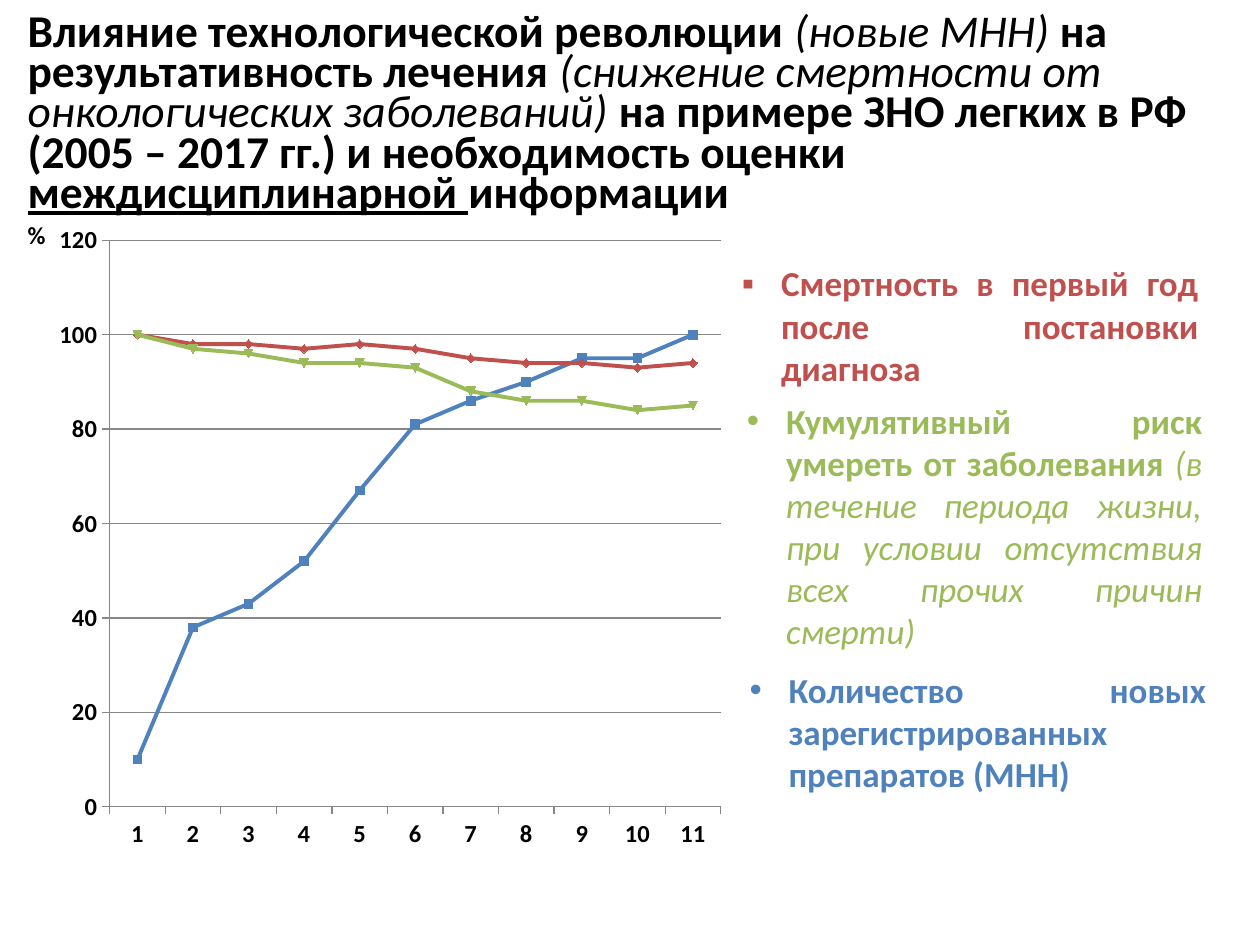
from lxml import etree
from pptx import Presentation
from pptx.chart.data import CategoryChartData
from pptx.dml.color import RGBColor
from pptx.enum.chart import XL_CHART_TYPE, XL_TICK_MARK
from pptx.enum.text import MSO_ANCHOR, MSO_AUTO_SIZE, PP_ALIGN
from pptx.oxml import parse_xml
from pptx.oxml.ns import nsdecls, qn
from pptx.util import Inches, Pt

LINE_MARKERS = XL_CHART_TYPE.LINE_MARKERS
TICK_OUTSIDE = XL_TICK_MARK.OUTSIDE
TOP = MSO_ANCHOR.TOP
FIT_SHAPE = MSO_AUTO_SIZE.SHAPE_TO_FIT_TEXT
JUSTIFY = PP_ALIGN.JUSTIFY

FONT = "Calibri"
COLORS = {
    "text": "000000",
    "drugs": "4F81BD",
    "mortality": "C0504D",
    "risk": "9BBB59",
    "grid": "878787",
}
BOLD = {"bold": True}
ITALIC = {"italic": True}
UNDERLINED = {"bold": True, "underline": True}

TITLE = [
    ("Влияние технологической революции ", BOLD),
    ("(новые МНН) ", ITALIC),
    ("на результативность лечения ", BOLD),
    ("(снижение смертности от онкологических заболеваний) ", ITALIC),
    ("на примере ЗНО легких в РФ (2005 – 2017 гг.) и необходимость оценки ", BOLD),
    ("междисциплинарной ", UNDERLINED),
    ("информации", BOLD),
]
SERIES = [
    ("Series 1", "drugs", (10, 38, 43, 52, 67, 81, 86, 90, 95, 95, 100)),
    ("Series 2", "mortality", (100, 98, 98, 97, 98, 97, 95, 94, 94, 93, 94)),
    ("Series 3", "risk", (100, 97, 96, 94, 94, 93, 88, 86, 86, 84, 85)),
]
LEGEND = [
    ((5.79, 2.03, 3.82, 1.11), "mortality", "▪",
     [("Смертность в первый год после постановки диагноза", BOLD)]),
    ((5.83, 3.12, 3.81, 2.12), "risk", "•",
     [("Кумулятивный риск умереть от заболевания ", BOLD),
      ("(в течение периода жизни, при условии отсутствия всех прочих причин смерти) ",
       ITALIC)]),
    ((5.85, 5.26, 3.82, 1.11), "drugs", "•",
     [("Количество новых зарегистрированных препаратов (МНН) ", BOLD)]),
]


def rgb(name):
    return RGBColor.from_string(COLORS[name])


class SlideBuilder:
    def __init__(self, page):
        self.page = page

    def style_font(self, font, size, color, bold=False, italic=False, underline=False):
        font.name, font.size = FONT, Pt(size)
        font.bold, font.italic, font.underline = bold, italic, underline
        font.color.rgb = rgb(color)

    def text(self, place, spans, size, color="text", wrap=True, grow=True):
        box = self.page.shapes.add_textbox(*map(Inches, place))
        frame = box.text_frame
        frame.word_wrap = wrap
        frame.vertical_anchor = TOP
        if grow:
            frame.auto_size = FIT_SHAPE
        para = frame.paragraphs[0]
        for words, look in spans:
            span = para.add_run()
            span.text = words
            self.style_font(span.font, size, color, **look)
        return para

    def title(self, place, spans):
        para = self.text(place, spans, 26, grow=False)
        para.line_spacing = Pt(23)

    def legend_entry(self, place, color, bullet, spans):
        para = self.text(place, spans, 20, color)
        para.alignment = JUSTIFY
        props = para._p.get_or_add_pPr()
        props.set("marL", str(Inches(0.31)))
        props.set("indent", str(-Inches(0.31)))
        etree.SubElement(props, qn("a:buFont")).set("typeface", "Arial")
        etree.SubElement(props, qn("a:buChar")).set("char", bullet)

    def line_chart(self, place, categories, series):
        data = CategoryChartData()
        data.categories = categories
        for name, _, values in series:
            data.add_series(name, values)
        chart = self.page.shapes.add_chart(
            LINE_MARKERS, *map(Inches, place), data).chart
        chart.has_legend = False
        chart.has_title = False
        self.style_font(chart.font, 10, "text")
        for line, (_, color, _) in zip(chart.plots[0].series, series):
            line.smooth = False
            line.format.line.width = Pt(2.25)
            line.format.line.color.rgb = rgb(color)
            line.marker.size = 5
            line.marker.format.fill.solid()
            line.marker.format.fill.fore_color.rgb = rgb(color)
            line.marker.format.line.color.rgb = rgb(color)
        for axis in (chart.category_axis, chart.value_axis):
            axis.major_tick_mark = TICK_OUTSIDE
            axis.format.line.color.rgb = rgb("grid")
            self.style_font(axis.tick_labels.font, 14, "text", bold=True)
        scale = chart.value_axis
        scale.minimum_scale, scale.maximum_scale, scale.major_unit = 0, 120, 20
        scale.has_major_gridlines = True
        scale.major_gridlines.format.line.color.rgb = rgb("grid")
        self.place_plot(chart, x=0.09, y=0.04, w=0.89, h=0.87)

    def place_plot(self, chart, **parts):
        """Fix the inner plot area, as fractions of the chart."""
        area = chart._chartSpace.chart.plotArea
        for old in area.findall(qn("c:layout")):
            area.remove(old)
        sizes = "".join(f'<c:{key} val="{part}"/>' for key, part in parts.items())
        area.insert(0, parse_xml(
            f'<c:layout {nsdecls("c")}><c:manualLayout><c:layoutTarget val="inner"/>'
            '<c:xMode val="edge"/><c:yMode val="edge"/>'
            f'{sizes}</c:manualLayout></c:layout>'))


def main():
    deck = Presentation()
    deck.slide_width, deck.slide_height = Inches(10), Inches(7.5)
    slide = SlideBuilder(deck.slides.add_slide(deck.slide_layouts[6]))
    slide.title((0.12, 0.08, 9.88, 0.98), TITLE)
    slide.line_chart((0.38, 1.7, 5.45, 5.17), [str(n) for n in range(1, 12)], SERIES)
    for entry in LEGEND:
        slide.legend_entry(*entry)
    slide.text((0.12, 1.7, 0.35, 0.34), [("%", BOLD)], 14, wrap=False)
    deck.save("out.pptx")


if __name__ == "__main__":
    main()
